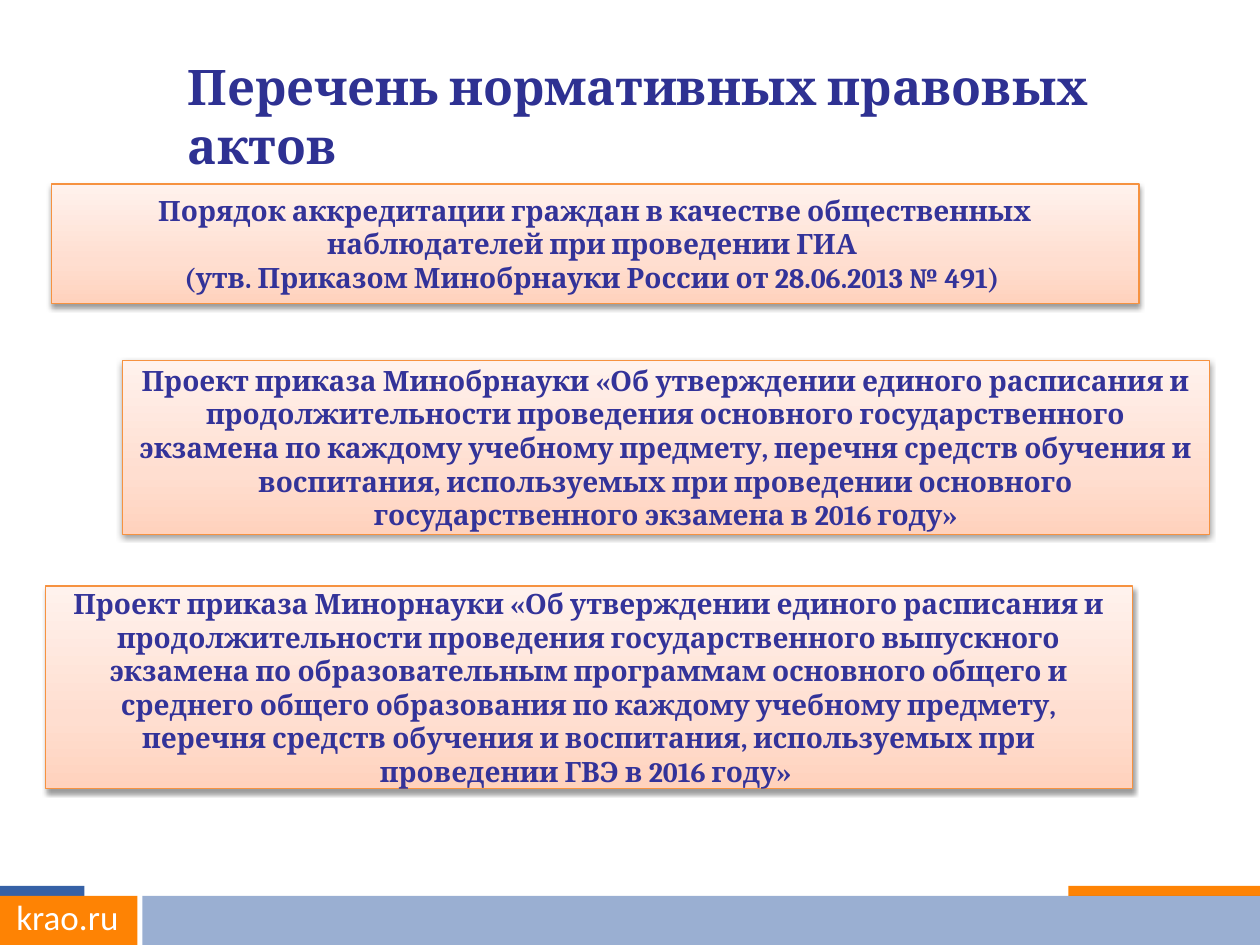
"""Builds a slide listing three legal acts on state exams."""
from lxml.etree import SubElement
from pptx import Presentation
from pptx.dml.color import RGBColor as RGB
from pptx.enum.shapes import MSO_SHAPE as SHAPE
from pptx.enum.text import MSO_ANCHOR as ANCHOR, MSO_AUTO_SIZE as AUTO, PP_ALIGN as ALIGN
from pptx.oxml.ns import qn
from pptx.util import Inches, Pt

TITLE = "Перечень нормативных правовых актов"
SITE = "krao.ru"
ACTS = [
    (0.41, 1.46, 0.95, [
        "Порядок аккредитации граждан в качестве общественных наблюдателей при проведении ГИА ",
        "(утв. Приказом Минобрнауки России от 28.06.2013 № 491) "]),
    (0.97, 2.86, 1.38, [
        "Проект приказа Минобрнауки «Об утверждении единого расписания и "
        "продолжительности проведения основного государственного экзамена по каждому "
        "учебному предмету, перечня средств обучения и воспитания, используемых при "
        "проведении основного государственного экзамена в 2016 году»"]),
    (0.36, 4.65, 1.61, [
        "Проект приказа Минорнауки «Об утверждении единого расписания и "
        "продолжительности проведения государственного выпускного экзамена по "
        "образовательным программам основного общего и среднего общего образования по "
        "каждому учебному предмету, перечня средств обучения и воспитания, используемых "
        "при проведении ГВЭ в 2016 году» "]),
]
ACT_W = 8.63

BLUE = RGB(0x36, 0x61, 0xA6)
ORANGE = RGB(0xFE, 0x83, 0x04)
EDGE = RGB(0xF6, 0x92, 0x40)
NAVY = RGB(0x2E, 0x31, 0x92)
INDIGO = RGB(0x33, 0x33, 0x99)
WHITE = RGB(0xFF, 0xFF, 0xFF)
BLACK = RGB(0, 0, 0)
STOPS = [(0, RGB(0xFF, 0xD2, 0xBD)), (35, RGB(0xFF, 0xDE, 0xD0)), (100, RGB(0xFF, 0xF2, 0xED))]

BARS = [
    (0, 7.03, 0.67, 0.08, BLUE, 100),
    (8.48, 7.03, 1.52, 0.08, ORANGE, 100),
    (0, 7.11, 1.09, 0.39, ORANGE, 100),
    (1.13, 7.11, 8.87, 0.39, BLUE, 50),
]


def add_color(parent, color, alpha=100):
    node = SubElement(parent, qn("a:srgbClr"), val=str(color))
    if alpha < 100:
        SubElement(node, qn("a:alpha"), val=str(alpha * 1000))


def add_rect(slide, *box):
    rect = slide.shapes.add_shape(SHAPE.RECTANGLE, *map(Inches, box))
    rect.shadow.inherit = False
    return rect


def add_bar(slide, x, y, w, h, color, alpha):
    bar = add_rect(slide, x, y, w, h)
    bar.fill.solid()
    bar.fill.fore_color.rgb = color
    bar.line.fill.background()
    solid = bar._element.spPr.find(qn("a:solidFill"))
    solid.clear()
    add_color(solid, color, alpha)


def write(frame, lines, face, size, color, bold, align):
    frame.word_wrap = True
    frame.text = "\n".join(lines)
    for para in frame.paragraphs:
        para.alignment = align
        font = para.font
        font.name, font.size, font.bold = face, Pt(size), bold
        font.color.rgb = color


def add_act(slide, x, y, h, lines):
    act = add_rect(slide, x, y, ACT_W, h)
    act.fill.gradient()
    act.fill.gradient_angle = 90
    stops = act._element.spPr.find(qn("a:gradFill")).find(qn("a:gsLst"))
    stops.clear()
    for pos, color in STOPS:
        add_color(SubElement(stops, qn("a:gs"), pos=str(pos * 1000)), color)
    act.line.color.rgb = EDGE
    act.line.width = Pt(0.75)
    effects = act._element.spPr.find(qn("a:effectLst"))
    shade = SubElement(effects, qn("a:outerShdw"), blurRad=str(Pt(3.1)),
                       dist=str(Pt(1.6)), dir="5400000", rotWithShape="0")
    add_color(shade, BLACK, 38)
    act.text_frame.vertical_anchor = ANCHOR.MIDDLE
    write(act.text_frame, lines, "Cambria", 16, INDIGO, True, ALIGN.CENTER)


def main():
    deck = Presentation()
    deck.slide_width, deck.slide_height = Inches(10), Inches(7.5)
    slide = deck.slides.add_slide(deck.slide_layouts[5])

    title = slide.shapes.title
    title.left, title.top, title.width, title.height = map(Inches, (1.39, 0.4, 8.2, 0.57))
    title.text_frame.vertical_anchor = ANCHOR.TOP
    title.text_frame.auto_size = AUTO.SHAPE_TO_FIT_TEXT
    write(title.text_frame, [TITLE], "Cambria", 28, NAVY, True, ALIGN.LEFT)

    for bar in BARS:
        add_bar(slide, *bar)
    site = slide.shapes.add_textbox(*map(Inches, (0, 7.06, 1.07, 0.44)))
    write(site.text_frame, [SITE], "Calibri", 20, WHITE, False, ALIGN.CENTER)

    for act in ACTS:
        add_act(slide, *act)
    deck.save("out.pptx")


if __name__ == "__main__":
    main()
